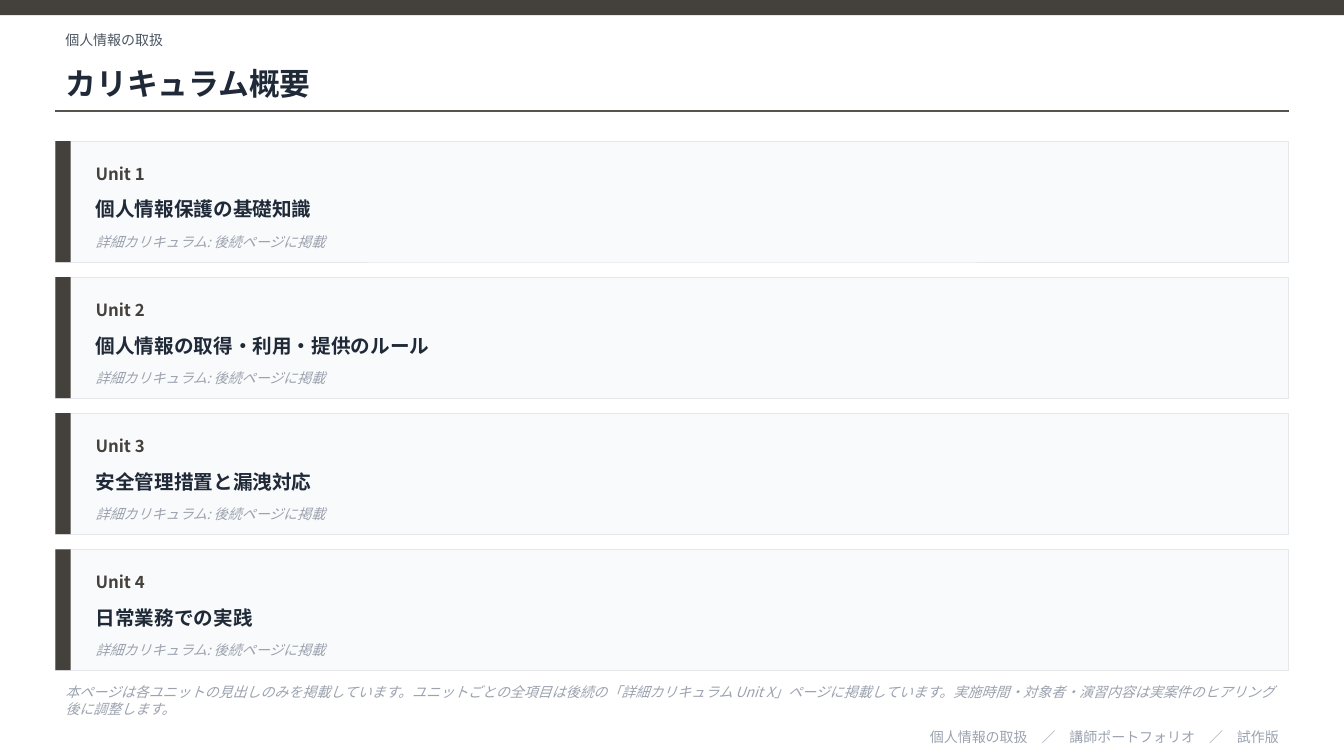
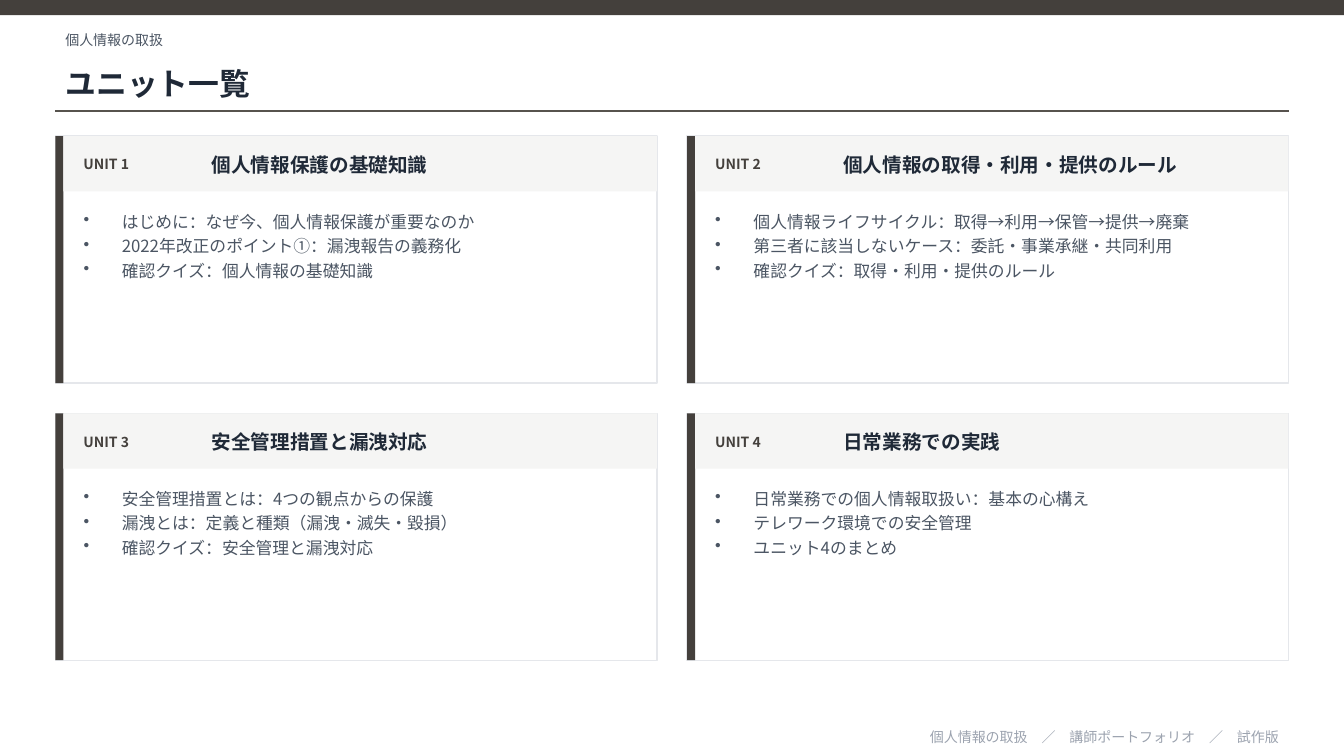
"""Build the curriculum overview and the unit list of a training portfolio."""
from dataclasses import dataclass

from lxml import etree
from pptx import Presentation
from pptx.dml.color import RGBColor
from pptx.enum.shapes import MSO_CONNECTOR, MSO_SHAPE
from pptx.enum.text import MSO_ANCHOR, MSO_AUTO_SIZE, PP_ALIGN
from pptx.oxml.ns import qn
from pptx.util import Inches, Pt

RECTANGLE = MSO_SHAPE.RECTANGLE
STRAIGHT = MSO_CONNECTOR.STRAIGHT
TOP, MIDDLE = MSO_ANCHOR.TOP, MSO_ANCHOR.MIDDLE
LEFT, RIGHT = PP_ALIGN.LEFT, PP_ALIGN.RIGHT
NO_AUTOFIT = MSO_AUTO_SIZE.NONE

FONT = "Noto Sans CJK JP"
COLORS = {
    "dark": "44403C",
    "rule": "57534E",
    "ink": "1F2937",
    "body": "4B5563",
    "muted": "9CA3AF",
    "border": "E5E7EB",
    "panel": "F9FAFB",
    "header": "F5F5F4",
    "white": "FFFFFF",
}
STYLES = {
    "course": {"size": Pt(10), "color": "body"},
    "title": {"size": Pt(22), "color": "ink", "bold": True},
    "unit": {"size": Pt(12), "color": "dark", "bold": True},
    "tag": {"size": Pt(10), "color": "dark", "bold": True},
    "heading": {"size": Pt(14), "color": "ink", "bold": True},
    "bullet": {"size": Pt(12), "color": "body"},
    "note": {"size": Pt(10), "color": "muted", "italic": True},
    "footer": {"size": Pt(10), "color": "muted"},
}

SLIDE_WIDTH, SLIDE_HEIGHT = 13.33, 7.5
MARGIN = 0.55
CONTENT_WIDTH = 12.23
RULE_TOP = 1.1
BULLET_INDENT = 0.38

COURSE = "個人情報の取扱"
FOOTER = "個人情報の取扱　／　講師ポートフォリオ　／　試作版"
DETAIL = "詳細カリキュラム: 後続ページに掲載"
FOOTNOTE = (
    "本ページは各ユニットの見出しのみを掲載しています。"
    "ユニットごとの全項目は後続の「詳細カリキュラム Unit X」ページに掲載しています。"
    "実施時間・対象者・演習内容は実案件のヒアリング後に調整します。"
)


@dataclass(frozen=True)
class Box:
    """A rectangular area in inches."""

    left: float
    top: float
    width: float
    height: float

    def lengths(self) -> tuple:
        """Return left, top, width and height as slide lengths."""
        return tuple(Inches(value) for value in (self.left, self.top, self.width, self.height))


@dataclass(frozen=True)
class Grid:
    """Equal cells with equal gaps, filled row by row."""

    top: float
    columns: int
    cell_height: float
    gap_x: float
    gap_y: float

    def cell(self, index: int) -> Box:
        """Return the area of one cell."""
        row, column = divmod(index, self.columns)
        width = (CONTENT_WIDTH - self.gap_x * (self.columns - 1)) / self.columns
        return Box(
            MARGIN + column * (width + self.gap_x),
            self.top + row * (self.cell_height + self.gap_y),
            width,
            self.cell_height,
        )


@dataclass(frozen=True)
class Unit:
    """One unit of the course."""

    name: str
    topics: tuple


UNITS = (
    Unit("個人情報保護の基礎知識", (
        "はじめに：なぜ今、個人情報保護が重要なのか",
        "2022年改正のポイント①：漏洩報告の義務化",
        "確認クイズ：個人情報の基礎知識",
    )),
    Unit("個人情報の取得・利用・提供のルール", (
        "個人情報ライフサイクル：取得→利用→保管→提供→廃棄",
        "第三者に該当しないケース：委託・事業承継・共同利用",
        "確認クイズ：取得・利用・提供のルール",
    )),
    Unit("安全管理措置と漏洩対応", (
        "安全管理措置とは：4つの観点からの保護",
        "漏洩とは：定義と種類（漏洩・滅失・毀損）",
        "確認クイズ：安全管理と漏洩対応",
    )),
    Unit("日常業務での実践", (
        "日常業務での個人情報取扱い：基本の心構え",
        "テレワーク環境での安全管理",
        "ユニット4のまとめ",
    )),
)
OVERVIEW_GRID = Grid(top=1.4, columns=1, cell_height=1.2, gap_x=0, gap_y=0.15)
CARD_GRID = Grid(top=1.35, columns=2, cell_height=2.45, gap_x=0.3, gap_y=0.3)


def rgb(name: str) -> RGBColor:
    """Return a named colour."""
    return RGBColor.from_string(COLORS[name])


def write(paragraph, text: str, style: str) -> None:
    """Add a run of text in a named style."""
    run = paragraph.add_run()
    run.text = text
    for attribute, value in {"name": FONT, **STYLES[style]}.items():
        if attribute == "color":
            run.font.color.rgb = rgb(value)
        else:
            setattr(run.font, attribute, value)
    east_asian = etree.SubElement(run.font._element, qn("a:ea"))
    east_asian.set("typeface", FONT)


def set_frame(shape, anchor) -> None:
    """Make a text frame wrap, keep its size and anchor its text."""
    settings = {"word_wrap": True, "auto_size": NO_AUTOFIT, "vertical_anchor": anchor}
    for attribute, value in settings.items():
        setattr(shape.text_frame, attribute, value)


def add_text(slide, box: Box, text: str, style: str, alignment=LEFT) -> None:
    """Add one paragraph in a vertically centred text box."""
    shape = slide.shapes.add_textbox(*box.lengths())
    set_frame(shape, MIDDLE)
    paragraph = shape.text_frame.paragraphs[0]
    paragraph.alignment = alignment
    write(paragraph, text, style)


def add_bullets(slide, box: Box, topics: tuple) -> None:
    """Add a bulleted list."""
    shape = slide.shapes.add_textbox(*box.lengths())
    set_frame(shape, TOP)
    for index, topic in enumerate(topics):
        frame = shape.text_frame
        paragraph = frame.add_paragraph() if index else frame.paragraphs[0]
        paragraph.space_after = Pt(3)
        properties = paragraph._p.get_or_add_pPr()
        properties.set("marL", str(Inches(BULLET_INDENT)))
        properties.set("indent", str(-Inches(BULLET_INDENT)))
        etree.SubElement(properties, qn("a:buChar")).set("char", "•")
        write(paragraph, topic, "bullet")


def add_panel(slide, box: Box, fill: str, border_width: float = 0) -> None:
    """Add a filled rectangle, with a border if it has a width."""
    shape = slide.shapes.add_shape(RECTANGLE, *box.lengths())
    shape.shadow.inherit = False
    shape.fill.solid()
    shape.fill.fore_color.rgb = rgb(fill)
    if border_width:
        shape.line.color.rgb = rgb("border")
        shape.line.width = Pt(border_width)
    else:
        shape.line.fill.background()


def add_rule(slide) -> None:
    """Add the line below the title."""
    top = Inches(RULE_TOP)
    rule = slide.shapes.add_connector(
        STRAIGHT, Inches(MARGIN), top, Inches(MARGIN + CONTENT_WIDTH), top
    )
    rule.line.color.rgb = rgb("rule")
    rule.line.width = Pt(1)
    etree.SubElement(rule._element.spPr, qn("a:effectLst"))


def add_base_slide(presentation, title: str):
    """Add a slide with the shared band, course name, title, rule and footer."""
    slide = presentation.slides.add_slide(presentation.slide_layouts.get_by_name("Title Only"))
    slide.background.fill.solid()
    slide.background.fill.fore_color.rgb = rgb("white")
    add_panel(slide, Box(0, 0, SLIDE_WIDTH, 0.15), "dark")
    add_text(slide, Box(MARGIN, 0.25, CONTENT_WIDTH, 0.3), COURSE, "course")
    shape = slide.shapes.title
    lengths = Box(MARGIN, 0.55, CONTENT_WIDTH, 0.55).lengths()
    for attribute, value in zip(("left", "top", "width", "height"), lengths):
        setattr(shape, attribute, value)
    set_frame(shape, MIDDLE)
    paragraph = shape.text_frame.paragraphs[0]
    paragraph.alignment = LEFT
    write(paragraph, title, "title")
    add_rule(slide)
    add_text(slide, Box(MARGIN, 7.2, CONTENT_WIDTH, 0.22), FOOTER, "footer", RIGHT)
    return slide


def add_overview_row(slide, box: Box, number: int, unit: Unit) -> None:
    """Add a full-width row naming one unit."""
    left, width = box.left + 0.3, box.width - 0.5
    add_panel(slide, box, "panel", 0.5)
    add_panel(slide, Box(box.left, box.top, 0.15, box.height), "dark")
    add_text(slide, Box(left, box.top + 0.12, 1.5, 0.4), f"Unit {number}", "unit")
    add_text(slide, Box(left, box.top + 0.45, width, 0.45), unit.name, "heading")
    add_text(slide, Box(left, box.top + 0.85, width, 0.3), DETAIL, "note")


def add_unit_card(slide, box: Box, number: int, unit: Unit) -> None:
    """Add a card with a unit's name and topics."""
    accent = 0.08
    left = box.left + 0.18
    add_panel(slide, box, "white", 1)
    add_panel(slide, Box(box.left, box.top, accent, box.height), "dark")
    add_panel(slide, Box(box.left + accent, box.top, box.width - accent, 0.55), "header")
    add_text(slide, Box(left, box.top + 0.08, 1.2, 0.4), f"UNIT {number}", "tag")
    add_text(slide, Box(box.left + 1.45, box.top + 0.08, box.width - 1.6, 0.4),
             unit.name, "heading")
    add_bullets(slide, Box(left, box.top + 0.7, box.width - 0.36, 1.6), unit.topics)


def add_units(slide, grid: Grid, add_unit) -> None:
    """Place every unit in its grid cell."""
    for index, unit in enumerate(UNITS):
        add_unit(slide, grid.cell(index), index + 1, unit)


def main() -> None:
    """Build and save the presentation."""
    presentation = Presentation()
    presentation.slide_width = Inches(SLIDE_WIDTH)
    presentation.slide_height = Inches(SLIDE_HEIGHT)

    overview = add_base_slide(presentation, "カリキュラム概要")
    add_units(overview, OVERVIEW_GRID, add_overview_row)
    add_text(overview, Box(MARGIN, 6.75, CONTENT_WIDTH, 0.4), FOOTNOTE, "note")

    unit_list = add_base_slide(presentation, "ユニット一覧")
    add_units(unit_list, CARD_GRID, add_unit_card)

    presentation.save("out.pptx")


if __name__ == "__main__":
    main()
